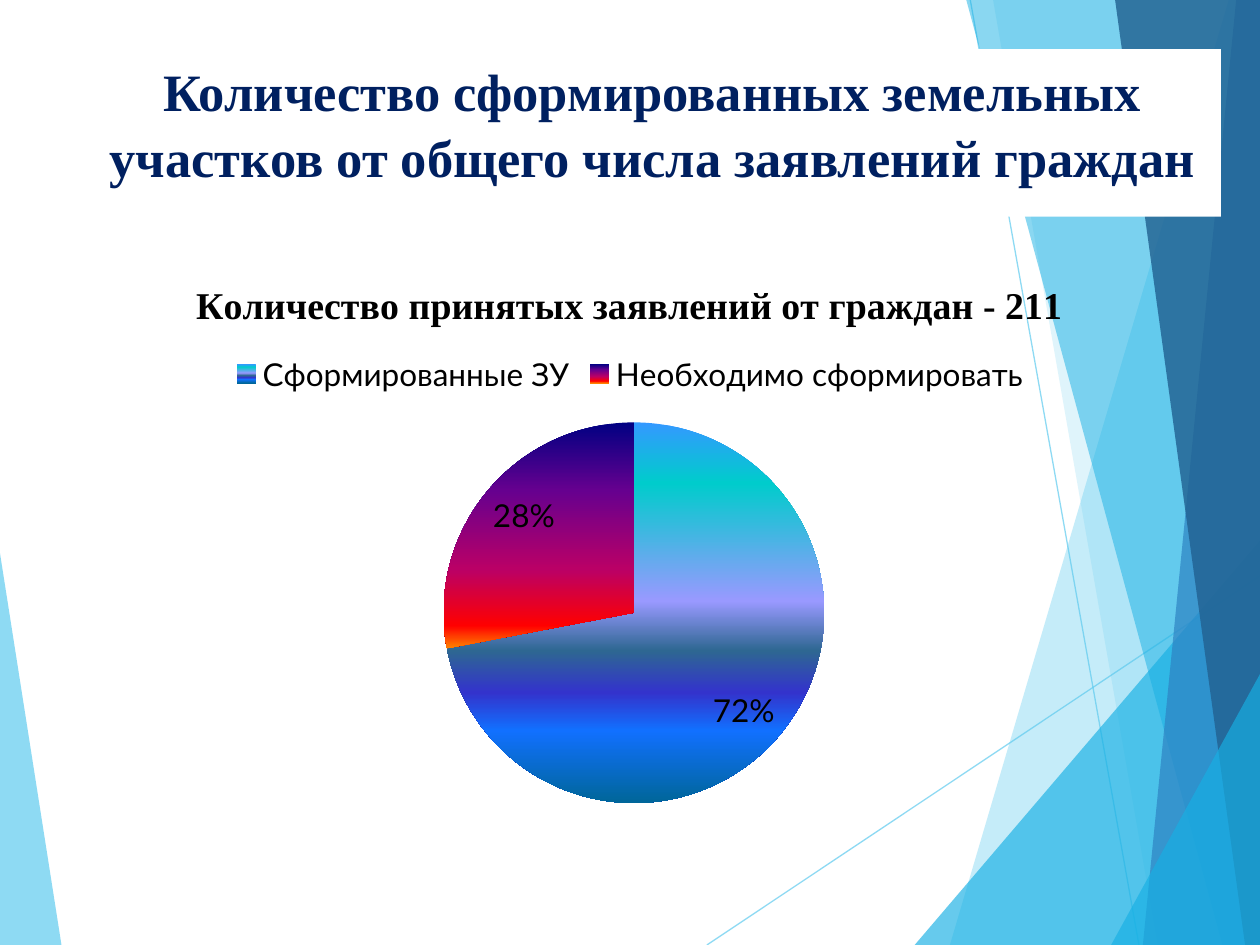
from lxml import etree
from pptx import Presentation
from pptx.chart import data as cd
from pptx.dml.color import RGBColor
from pptx.enum import chart as ch, shapes as sh, text as tx
from pptx.oxml import ns
from pptx.util import Cm, Pt

WIDE, HIGH = 25.4, 19.05

TITLE = "Количество сформированных земельных участков от общего числа заявлений граждан"
HEAD = "Количество принятых заявлений от граждан - 211"
SHARES = [("Сформированные ЗУ", 72), ("Необходимо сформировать", 28)]

THEME = {
    "serif": "Times New Roman", "sans": "Lato",
    "title": 30, "head": 21.6, "text": 18, "rule": 0.75,
    "navy": "002060", "black": "000000", "white": "FFFFFF",
    "sky": "5FCBEF", "cyan": "17B0E4", "blue": "2E83C3", "deep": "226292",
    # (position in percent, colour) for each slice
    "slices": [
        [(0, "3399FF"), (16, "00CCCC"), (47, "9999FF"), (60, "2E6792"),
         (71, "3333CC"), (81, "1170FF"), (100, "006699")],
        [(0, "000082"), (30, "66008F"), (65, "BA0066"), (90, "FF0000"),
         (100, "FF8200")],
    ],
}

TITLE_BOX = (1.7, 0.99, 22.91, 3.38)
CHART_BOX = (1.27, 5.16, 22.86, 11.86)
PLOT = {"x": 0.083, "y": 0.283, "w": 0.841, "h": 0.647}

WEDGE = [(0, 11.15), (1.24, HIGH), (0, HIGH)]
RULES = [((14.25, HIGH), (WIDE, 11.61)), ((19.56, 0), (22.96, HIGH))]
# upper corner, x at the bottom edge, colour, opacity in percent
BANDS = [
    ((24.77, 0), 19.15, "sky", 36),
    ((20.02, 0), 23.34, "sky", 20),
    ((WIDE, 10.9), 18.44, "cyan", 66),
    ((19.48, 0), 24.64, "cyan", 50),
    ((24.92, 0), 23.04, "blue", 70),
    ((22.48, 0), 25.1, "deep", 82),
    ((WIDE, 13.59), 22.4, "cyan", 66),
]


def rgb(name):
    return RGBColor.from_string(THEME[name])


def cms(vals):
    return [Cm(v) for v in vals]


def fade(shape, alpha):
    for clr in shape._element.spPr.iter(ns.qn("a:srgbClr")):
        etree.SubElement(clr, ns.qn("a:alpha"), val=str(alpha * 1000))


def add_area(slide, pts, color, alpha):
    pen = slide.shapes.build_freeform(*cms(pts[0]))
    pen.add_line_segments([cms(p) for p in pts[1:]], close=True)
    area = pen.convert_to_shape()
    area.shadow.inherit = False
    area.fill.solid()
    area.fill.fore_color.rgb = rgb(color)
    area.line.fill.background()
    fade(area, alpha)


def add_rule(slide, start, end):
    rule = slide.shapes.add_connector(
        sh.MSO_CONNECTOR.STRAIGHT, *cms(start + end))
    rule.line.color.rgb = rgb("sky")
    rule.line.width = Pt(THEME["rule"])
    fade(rule, 70)
    etree.SubElement(rule._element.spPr, ns.qn("a:effectLst"))


def add_decor(slide):
    add_area(slide, WEDGE, "sky", 70)
    for start, end in RULES:
        add_rule(slide, start, end)
    for top, foot, color, alpha in BANDS:
        pts = [top, (foot, HIGH), (WIDE, HIGH)]
        if top[0] < WIDE:
            pts.append((WIDE, 0))
        add_area(slide, pts, color, alpha)


def set_font(font, face, size, color, bold):
    font.name, font.size, font.bold = THEME[face], Pt(THEME[size]), bold
    font.color.rgb = rgb(color)


def put_title(slide):
    box = slide.shapes.title
    box.left, box.top, box.width, box.height = cms(TITLE_BOX)
    box.fill.solid()
    box.fill.fore_color.rgb = rgb("white")
    frame = box.text_frame
    frame.word_wrap = True
    frame.auto_size = tx.MSO_AUTO_SIZE.NONE
    frame.vertical_anchor = tx.MSO_ANCHOR.TOP
    para = frame.paragraphs[0]
    para.alignment = tx.PP_ALIGN.CENTER
    para.line_spacing = 1.05
    run = para.add_run()
    run.text = TITLE
    set_font(run.font, "serif", "title", "navy", True)
    slide.shapes._spTree.append(box._element)  # in front of the bands


def place_plot(chart):
    area = chart._chartSpace.find(".//" + ns.qn("c:plotArea"))
    for old in area.findall(ns.qn("c:layout")):
        area.remove(old)
    layout = etree.Element(ns.qn("c:layout"))
    area.insert(0, layout)
    manual = etree.SubElement(layout, ns.qn("c:manualLayout"))
    parts = {"layoutTarget": "inner", "xMode": "edge", "yMode": "edge", **PLOT}
    for tag, val in parts.items():
        etree.SubElement(manual, ns.qn("c:" + tag), val=str(val))


def paint_slices(plot):
    for i in range(len(SHARES)):
        fill = plot.series[0].points[i].format.fill
        fill.gradient()
        fill.gradient_angle = 270
    lists = list(plot._element.iter(ns.qn("a:gsLst")))
    for stops, colors in zip(lists, THEME["slices"]):
        for old in list(stops):
            stops.remove(old)
        for pos, color in colors:
            stop = etree.SubElement(stops, ns.qn("a:gs"), pos=str(pos * 1000))
            etree.SubElement(stop, ns.qn("a:srgbClr"), val=color)


def add_pie(slide):
    data = cd.CategoryChartData()
    data.categories = [name for name, _ in SHARES]
    data.add_series("Series 1", [val for _, val in SHARES])
    chart = slide.shapes.add_chart(
        ch.XL_CHART_TYPE.PIE, *cms(CHART_BOX), data).chart
    set_font(chart.font, "sans", "text", "black", False)

    chart.has_title = True
    run = chart.chart_title.text_frame.paragraphs[0].add_run()
    run.text = HEAD
    set_font(run.font, "serif", "head", "black", True)

    chart.has_legend = True
    chart.legend.position = ch.XL_LEGEND_POSITION.TOP
    chart.legend.include_in_layout = False

    plot = chart.plots[0]
    plot.vary_by_categories = True
    plot.has_data_labels = True
    tags = plot.data_labels
    tags.show_percentage, tags.show_value = True, False
    tags.position = ch.XL_LABEL_POSITION.INSIDE_END
    set_font(tags.font, "sans", "text", "black", False)
    paint_slices(plot)
    place_plot(chart)


def main():
    deck = Presentation()
    deck.slide_width, deck.slide_height = cms((WIDE, HIGH))
    slide = deck.slides.add_slide(deck.slide_layouts[5])
    add_decor(slide)
    put_title(slide)
    add_pie(slide)
    deck.save("out.pptx")


if __name__ == "__main__":
    main()
